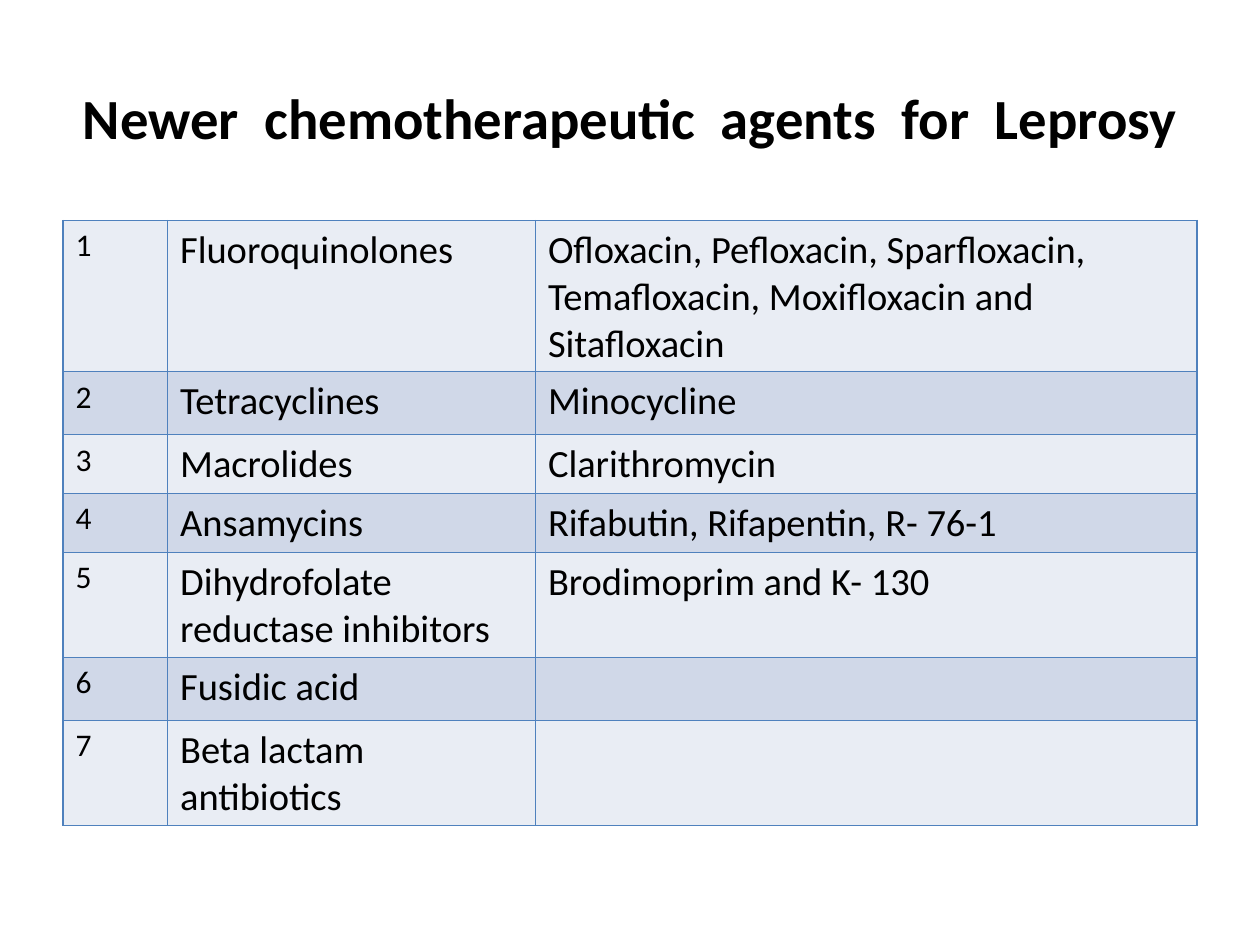
from lxml import etree
from pptx import Presentation
from pptx.dml.color import RGBColor
from pptx.enum.text import MSO_ANCHOR, PP_ALIGN
from pptx.oxml.ns import qn
from pptx.util import Inches, Pt

CENTER = PP_ALIGN.CENTER
MIDDLE = MSO_ANCHOR.MIDDLE

TITLE = "Newer  chemotherapeutic  agents  for  Leprosy"
# drug class, agents, row height in inches
AGENTS = [
    ("Fluoroquinolones",
     "Ofloxacin, Pefloxacin, Sparfloxacin, Temafloxacin, Moxifloxacin and Sitafloxacin", 0.77),
    ("Tetracyclines", "Minocycline", 0.5),
    ("Macrolides", "Clarithromycin", 0.42),
    ("Ansamycins", "Rifabutin, Rifapentin, R- 76-1", 0.42),
    ("Dihydrofolate reductase inhibitors", "Brodimoprim and K- 130", 0.58),
    ("Fusidic acid", "", 0.5),
    ("Beta lactam antibiotics", "", 0.5),
]
COLORS = {"text": "000000", "odd": "E9EDF4", "even": "D0D8E8", "border": "4F81BD"}
FONT = "Calibri"
COLUMN_WIDTHS = (0.83, 2.92, 5.25)
COLUMN_SIZES = (18, 22, 22)
SLIDE_W, SLIDE_H = 10, 7.5
MARGIN = 0.05 * SLIDE_W
CONTENT_W = SLIDE_W - 2 * MARGIN
TITLE_TOP, TITLE_H = 0.04 * SLIDE_H, 1.25
TABLE_TOP = 1.75


def style(paragraph, size, bold=False):
    font = paragraph.font
    font.name, font.size, font.bold = FONT, Pt(size), bold
    font.color.rgb = RGBColor.from_string(COLORS["text"])


def add_borders(cell):
    """Draw all four edges; the lines must precede the fill in tcPr."""
    properties = cell._tc.get_or_add_tcPr()
    for position, edge in enumerate(("a:lnL", "a:lnR", "a:lnT", "a:lnB")):
        line = etree.Element(qn(edge), w=str(Pt(1)))
        fill = etree.SubElement(line, qn("a:solidFill"))
        etree.SubElement(fill, qn("a:srgbClr"), val=COLORS["border"])
        properties.insert(position, line)


def add_title(slide):
    box = slide.shapes.add_textbox(
        Inches(MARGIN), Inches(TITLE_TOP), Inches(CONTENT_W), Inches(TITLE_H))
    frame = box.text_frame
    frame.word_wrap = True
    frame.vertical_anchor = MIDDLE
    heading = frame.paragraphs[0]
    heading.text = TITLE
    heading.alignment = CENTER
    style(heading, 32.4, bold=True)


def add_agents_table(slide):
    total_height = sum(height for *_, height in AGENTS)
    table = slide.shapes.add_table(
        len(AGENTS), len(COLUMN_WIDTHS), Inches(MARGIN), Inches(TABLE_TOP),
        Inches(CONTENT_W), Inches(total_height)).table
    table.first_row = False
    for column, width in zip(table.columns, COLUMN_WIDTHS):
        column.width = Inches(width)
    for number, (row, (drug_class, agents, height)) in enumerate(zip(table.rows, AGENTS), 1):
        row.height = Inches(height)
        band = COLORS["odd" if number % 2 else "even"]
        for cell, text, size in zip(row.cells, (str(number), drug_class, agents), COLUMN_SIZES):
            cell.text = text
            style(cell.text_frame.paragraphs[0], size)
            cell.fill.solid()
            cell.fill.fore_color.rgb = RGBColor.from_string(band)
            add_borders(cell)


def main():
    deck = Presentation()
    deck.slide_width, deck.slide_height = Inches(SLIDE_W), Inches(SLIDE_H)
    slide = deck.slides.add_slide(deck.slide_layouts[6])
    add_title(slide)
    add_agents_table(slide)
    deck.save("out.pptx")


if __name__ == "__main__":
    main()
